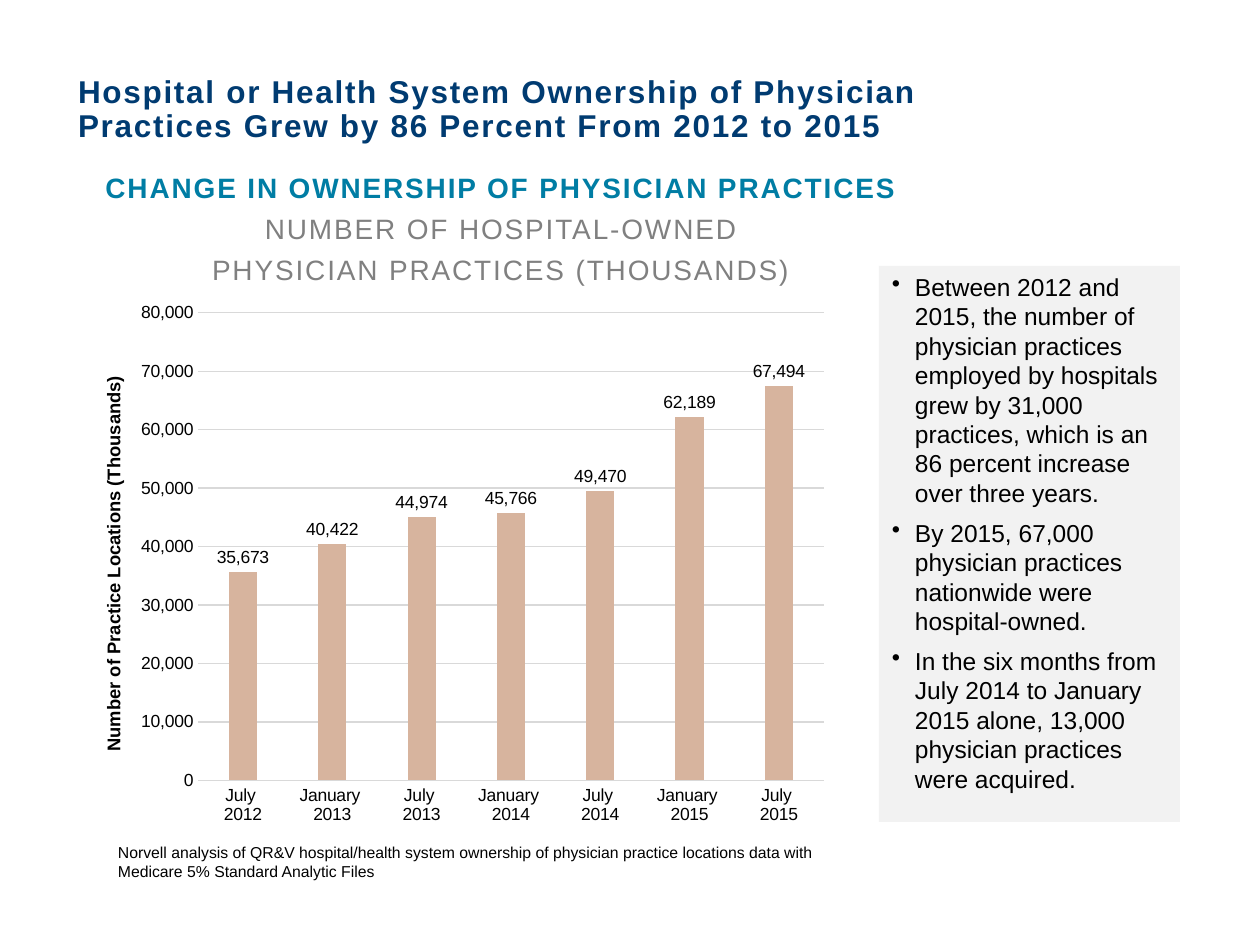
from dataclasses import dataclass

from lxml import etree
from pptx import Presentation
from pptx.chart.data import CategoryChartData
from pptx.dml.color import RGBColor
from pptx.enum import chart as ch, shapes, text
from pptx.oxml import ns
from pptx.util import Emu, Pt

PX = 914400 / 126  # EMU in one px
FONT = "Arial"
GRID = "D9D9D9"


@dataclass
class Box:
    x: int
    y: int
    w: int
    h: int

    def emu(self) -> list[Emu]:
        return [Emu(round(v * PX)) for v in (self.x, self.y, self.w, self.h)]


@dataclass
class Para:
    words: str
    size: float
    color: str = "000000"
    bold: bool = False
    align: text.PP_ALIGN = text.PP_ALIGN.LEFT
    track: int = 0  # letter spacing, 1/100 pt
    before: int = 0
    after: int = 0
    lead: float = 1.0
    bullet: bool = False


def rgb(code: str) -> RGBColor:
    return RGBColor.from_string(code)


def style(font, size: float, color: str, bold: bool = False) -> None:
    font.name, font.size, font.bold = FONT, Pt(size), bold
    font.color.rgb = rgb(color)


def write(frame, paras: list[Para], anchor=text.MSO_ANCHOR.TOP, pad: int = 11) -> None:
    frame.word_wrap = True
    frame.vertical_anchor = anchor
    frame.margin_left = frame.margin_right = Emu(round(pad * PX))
    frame.margin_top = frame.margin_bottom = Emu(round(6 * PX))
    for i, item in enumerate(paras):
        p = frame.add_paragraph() if i else frame.paragraphs[0]
        p.text = item.words
        p.alignment = item.align
        if item.bullet:
            props = p._p.get_or_add_pPr()
            dent = round(23 * PX)
            props.set("marL", str(dent))
            props.set("indent", str(-dent))
            etree.SubElement(props, ns.qn("a:buChar")).set("char", "•")
        p.line_spacing = item.lead
        p.space_before = Pt(item.before if i else 0)
        p.space_after = Pt(item.after)
        style(p.font, item.size, item.color, item.bold)
        if item.track:
            p.font._rPr.set("spc", str(item.track))


def place(node, index: int, **parts: float) -> None:
    """Give a chart part a fixed layout, as fractions of the chart."""
    for old in node.findall(ns.qn("c:layout")):
        node.remove(old)
    layout = etree.Element(ns.qn("c:layout"))
    manual = etree.SubElement(layout, ns.qn("c:manualLayout"))
    if "w" in parts:
        etree.SubElement(manual, ns.qn("c:layoutTarget")).set("val", "inner")
    for key in ("x", "y"):
        etree.SubElement(manual, ns.qn(f"c:{key}Mode")).set("val", "edge")
    for key, value in parts.items():
        etree.SubElement(manual, ns.qn(f"c:{key}")).set("val", str(value))
    node.insert(index, layout)


def plot(slide, box: Box, cats: list[str], vals: list[int]) -> None:
    data = CategoryChartData(number_format="#,##0")
    data.categories = cats
    data.add_series("Series 1", vals)
    kind = ch.XL_CHART_TYPE.COLUMN_CLUSTERED
    chart = slide.shapes.add_chart(kind, *box.emu(), data).chart
    chart.has_legend = chart.has_title = False
    style(chart.font, 10, "000000")

    # Columns and their labels
    bars = chart.plots[0]
    bars.gap_width, bars.overlap, bars.vary_by_categories = 219, -27, False
    fill = bars.series[0].format.fill
    fill.solid()
    fill.fore_color.rgb = rgb("D7B49E")
    bars.has_data_labels = True
    tags = bars.data_labels
    tags.show_value = True
    tags.position = ch.XL_LABEL_POSITION.OUTSIDE_END
    tags.number_format, tags.number_format_is_linked = "#,##0", False
    style(tags.font, 10, "000000")

    # Axes
    base, side = chart.category_axis, chart.value_axis
    side.has_major_gridlines = True
    for axis in (base, side):
        axis.major_tick_mark = axis.minor_tick_mark = ch.XL_TICK_MARK.NONE
    for line in (base.format.line, side.major_gridlines.format.line):
        line.color.rgb = rgb(GRID)
        line.width = Pt(0.75)
    side.format.line.fill.background()
    side.minimum_scale, side.maximum_scale, side.major_unit = 0, 80000, 10000
    side.tick_labels.number_format = "#,##0"
    side.tick_labels.number_format_is_linked = False
    name = side.axis_title.text_frame
    name.text = "Number of Practice Locations (Thousands)"
    style(name.paragraphs[0].font, 10.5, "000000", True)

    place(side.axis_title._element, 1, x=0.04, y=0.15)
    area = chart._chartSpace.find(".//" + ns.qn("c:plotArea"))
    place(area, 0, x=0.17, y=0.04, w=0.81, h=0.86)


def main() -> None:
    deck = Presentation()
    deck.slide_width, deck.slide_height = Box(0, 0, 1260, 945).emu()[2:]
    slide = deck.slides.add_slide(deck.slide_layouts[6])

    def label(box: Box, paras: list[Para], anchor=text.MSO_ANCHOR.TOP) -> None:
        write(slide.shapes.add_textbox(*box.emu()).text_frame, paras, anchor)

    # Title
    label(Box(67, 77, 976, 73), [
        Para("Hospital or Health System Ownership of Physician Practices "
             "Grew by 86 Percent From 2012 to 2015",
             18, "003B71", True, track=100, lead=0.9),
    ], text.MSO_ANCHOR.BOTTOM)

    # Chart
    dates = [(m, y) for y in range(2012, 2016) for m in ("January", "July")][1:]
    plot(slide, Box(67, 291, 772, 544), [f"{m} \n{y}" for m, y in dates],
         [35673, 40422, 44974, 45766, 49470, 62189, 67494])

    # Chart heading
    heads = [
        ("CHANGE IN OWNERSHIP OF PHYSICIAN PRACTICES", "007DA4", True),
        ("NUMBER OF HOSPITAL-OWNED", "808080", False),
        ("PHYSICIAN PRACTICES (THOUSANDS)", "808080", False),
    ]
    label(Box(67, 165, 868, 94), [
        Para(words, 16, color, bold, text.PP_ALIGN.CENTER, track=110, before=4)
        for words, color, bold in heads
    ])

    # Side panel
    points = [
        "Between 2012 and 2015, the number of physician practices employed by "
        "hospitals grew by 31,000 practices, which is an 86 percent increase "
        "over three years.",
        "By 2015, 67,000 physician practices nationwide were hospital-owned.",
        "In the six months from July 2014 to January 2015 alone, 13,000 "
        "physician practices were acquired.",
    ]
    panel = slide.shapes.add_shape(shapes.MSO_SHAPE.RECTANGLE,
                                   *Box(879, 266, 301, 556).emu())
    panel.shadow.inherit = False
    panel.fill.solid()
    panel.fill.fore_color.rgb = rgb("F2F2F2")
    panel.line.fill.background()
    write(panel.text_frame,
          [Para(words, 14, after=6, bullet=True) for words in points], pad=13)

    # Source line
    label(Box(107, 837, 733, 79), [
        Para("Norvell analysis of QR&V hospital/health system ownership of "
             "physician practice locations data with Medicare 5% Standard "
             "Analytic Files", 9, after=9),
    ])
    deck.save("out.pptx")


if __name__ == "__main__":
    main()
